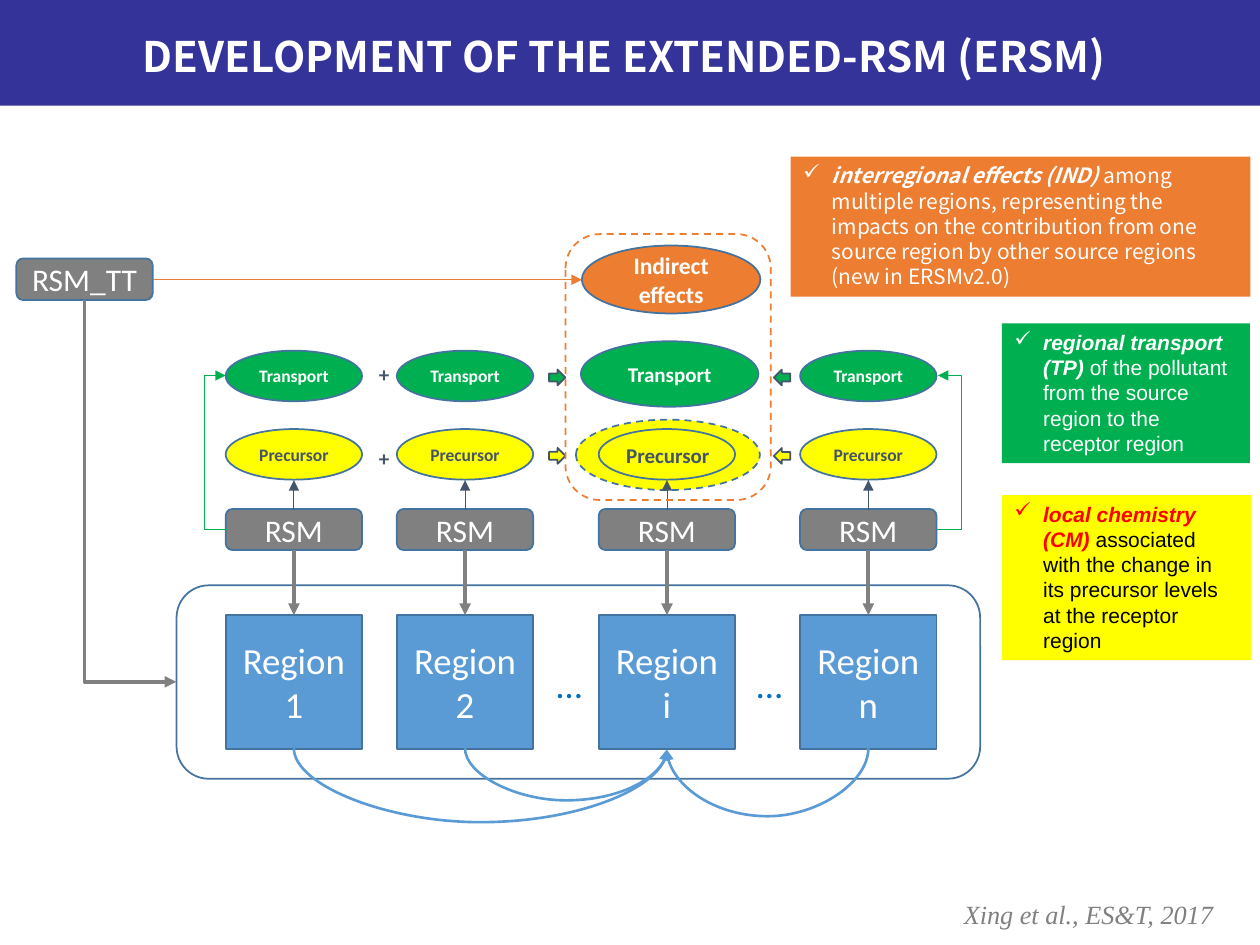
from lxml import etree
from pptx import Presentation
from pptx import util as u
from pptx.dml.color import RGBColor
from pptx.enum import dml, shapes, text
from pptx.oxml.ns import qn

NAVY = RGBColor(0x33, 0x33, 0x99)
WHITE = RGBColor(0xFF, 0xFF, 0xFF)
BLACK = RGBColor(0, 0, 0)
GREY = RGBColor(0x80, 0x80, 0x80)
SLATE = RGBColor(0x44, 0x54, 0x6A)
EDGE = RGBColor(0x43, 0x73, 0x9E)
BLUE = RGBColor(0x5B, 0x9B, 0xD5)
DOT = RGBColor(0x00, 0x70, 0xC0)
GREEN = RGBColor(0x00, 0xB0, 0x50)
YELLOW = RGBColor(0xFF, 0xFF, 0x00)
ORANGE = RGBColor(0xED, 0x7D, 0x31)
RED = RGBColor(0xFF, 0, 0)

KIND = shapes.MSO_SHAPE
NOTO = "Noto Sans CJK SC"
COLS = (0.99, 4.44, 8.51, 12.57)  # column offsets inside the diagram
WIDE = 2.75                       # column width
MID = [x + WIDE / 2 for x in COLS]
HUB = 2                           # the receptor column
THIN = 0.03                       # depth of a nearly flat connector


def style(obj, values):
    for key, val in values.items():
        setattr(obj, key, val)


def write(para, words, ink, size, name="Calibri", bold=False, slant=False):
    run = para.add_run()
    run.text = words
    style(run.font, dict(size=u.Pt(size), name=name, bold=bold, italic=slant))
    run.font.color.rgb = ink


def shape(slide, kind, box, fill=None, edge=EDGE, dash=False):
    item = slide.shapes.add_shape(kind, *map(u.Cm, box))
    item.shadow.inherit = False
    if fill is None:
        item.fill.background()
    else:
        item.fill.solid()
        item.fill.fore_color.rgb = fill
    if edge is None:
        item.line.fill.background()
    else:
        item.line.color.rgb = edge
        item.line.width = u.Pt(1)
    if dash:
        item.line.dash_style = dml.MSO_LINE.DASH
    return item


def node(slide, kind, box, words, fill, ink, size, bold=False, dash=False):
    item = shape(slide, kind, box, fill, dash=dash)
    frame = item.text_frame
    style(frame, dict(word_wrap=True, vertical_anchor=text.MSO_ANCHOR.MIDDLE))
    if kind == KIND.OVAL:
        style(frame, dict(margin_left=0, margin_right=0, margin_top=0, margin_bottom=0))
    para = frame.paragraphs[0]
    para.alignment = text.PP_ALIGN.CENTER
    write(para, words, ink, size, bold=bold)


def label(slide, box, words, ink, size, wrap=False, **font):
    frame = slide.shapes.add_textbox(*map(u.Cm, box)).text_frame
    frame.word_wrap = wrap
    write(frame.paragraphs[0], words, ink, size, **font)


def arrow(slide, ends, ink, width):
    item = slide.shapes.add_connector(shapes.MSO_CONNECTOR.STRAIGHT, *map(u.Cm, ends))
    item.line.color.rgb = ink
    item.line.width = u.Pt(width)
    etree.SubElement(item.line._get_or_add_ln(), qn("a:tailEnd"), type="triangle")
    etree.SubElement(item.element.spPr, qn("a:effectLst"))
    return item


def link(slide, preset, box, ink, width, turn=0, flip=None, bend=None):
    """Bent or curved arrow; box is its frame before turning."""
    x, y, w, h = box
    item = arrow(slide, (x, y, x + w, y + h), ink, width)
    props = item.element.spPr
    frame, geom = props.find(qn("a:xfrm")), props.find(qn("a:prstGeom"))
    frame.set("rot", str(turn * 60000))
    if flip:
        frame.set(flip, "1")
    geom.set("prst", preset)
    if bend:
        guides = geom.find(qn("a:avLst"))
        if guides is None:
            guides = etree.SubElement(geom, qn("a:avLst"))
        etree.SubElement(guides, qn("a:gd"), name="adj1",
                         fmla=f"val {round(bend / w * 100000)}")


def header(slide, box):
    x, y, w, h = box
    band = shape(slide, KIND.RECTANGLE, box, NAVY, None)
    band.element.getparent().insert(2, band.element)  # behind the title
    title = slide.shapes.title
    style(title, dict(left=u.Cm(x + 1.15), top=u.Cm(y + 0.2),
                      width=u.Cm(w - 2.54), height=u.Cm(h - 0.28)))
    style(title.text_frame, dict(vertical_anchor=text.MSO_ANCHOR.MIDDLE, word_wrap=True,
                                 auto_size=text.MSO_AUTO_SIZE.NONE))
    para = title.text_frame.paragraphs[0]
    para.alignment = text.PP_ALIGN.CENTER
    write(para, "DEVELOPMENT OF THE EXTENDED-RSM (ERSM)", WHITE, 24, NOTO, True)


def regions(slide, box):
    x, y, w, h = box
    shape(slide, KIND.ROUNDED_RECTANGLE, box)
    for col, tag in zip(COLS, "12in"):
        node(slide, KIND.RECTANGLE, (x + col, y + 0.6, WIDE, 2.7),
             f"Region {tag}", BLUE, WHITE, 21)
    for gap in (7.41, 11.45):
        label(slide, (x + gap, y + 1.41, 1.04, 1.14), "…", DOT, 21)
    # Arcs from the source regions to the receptor
    foot = y + 3.3
    for src, drop in ((0, 1.49), (1, 1.05), (3, 1.37)):
        span = abs(MID[HUB] - MID[src])
        centre = x + (MID[HUB] + MID[src]) / 2
        turn, flip = (270, "flipH") if src < HUB else (90, None)
        link(slide, "curvedConnector3", (centre - THIN / 2, foot - span / 2, THIN, span),
             BLUE, 1.5, turn, flip, drop)


def models(slide, box):
    x, y, w, h = box
    for col, mid in zip(COLS, MID):
        node(slide, KIND.ROUNDED_RECTANGLE, (x + col, y, WIDE, h), "RSM", GREY, WHITE, 18)
        arrow(slide, (x + mid, y + h, x + mid, y + 2.14), GREY, 2.25)


def effects(slide, box, words, fill, ink, big, plus, dash=False):
    """One row of ovals that add up to the large one of the receptor."""
    x, y, w, h = box
    left, wide = big
    node(slide, KIND.OVAL, (x + left, y, wide, h), words, fill, ink, 12, True, dash)
    for i, col in enumerate(COLS):
        if i != HUB:
            node(slide, KIND.OVAL, (x + col, y + 0.19, WIDE, 1.02), words, fill, ink, 10, True)
    label(slide, (x + 3.83, y + plus, 0.74, 0.76), "+", SLATE, 12, bold=True)
    for gap, turn in ((7.51, 0), (12.04, 180)):
        block = shape(slide, KIND.RIGHT_ARROW, (x + gap, y + 0.57, 0.33, 0.32), fill, SLATE)
        block.rotation = turn


def precursor(slide, box):
    x, y, w, h = box
    effects(slide, box, "Precursor", YELLOW, SLATE, (8.05, 3.71), 0.4, True)
    shape(slide, KIND.OVAL, (x + COLS[HUB], y + 0.19, WIDE, 1.02))
    for mid in MID:
        arrow(slide, (x + mid, y + 1.82, x + mid, y + 1.22), SLATE, 0.5)


def transport(slide, box):
    x, y, w, h = box
    effects(slide, box, "Transport", GREEN, WHITE, (8.15, 3.58), 0.28)
    # Wires from the outer models
    for edge, turn, flip, bend in ((COLS[0], 180, None, 0.46),
                                   (COLS[-1] + WIDE, 0, "flipV", 0.51)):
        link(slide, "bentConnector3", (x + edge, y + 0.69, THIN, 3.1),
             GREEN, 0.5, turn, flip, bend)


def indirect(slide, box):
    x, y, w, h = box
    node(slide, KIND.ROUNDED_RECTANGLE, (x, y + 0.49, WIDE, 0.84), "RSM_TT", GREY, WHITE, 18)
    node(slide, KIND.OVAL, (x + 11.4, y + 0.23, 3.6, 1.37), "Indirect effects",
         ORANGE, WHITE, 13.5, True)
    link(slide, "bentConnector2", (x - 1.55, y + 4.25, 7.7, 1.85), GREY, 2.25, 270, "flipH")
    arrow(slide, (x + WIDE, y + 0.92, x + 11.4, y + 0.92), ORANGE, 0.5)
    shape(slide, KIND.ROUNDED_RECTANGLE, (x + w - 4.14, y, 4.14, h), None, ORANGE, True)


def note(slide, box, fill, lead, rest, inks, name):
    frame = shape(slide, KIND.RECTANGLE, box, fill, None).text_frame
    style(frame, dict(word_wrap=True, vertical_anchor=text.MSO_ANCHOR.TOP))
    para = frame.paragraphs[0]
    para.alignment = text.PP_ALIGN.LEFT
    props = para._p.get_or_add_pPr()
    style_in = u.Cm(0.58)
    props.set("marL", str(style_in))
    props.set("indent", str(-style_in))
    etree.SubElement(props, qn("a:buChar"), char="✓")
    write(para, lead + " ", inks[0], 12, name, True, True)
    write(para, rest, inks[1], 12, name)


def main():
    deck = Presentation()
    style(deck, dict(slide_width=u.Cm(25.4), slide_height=u.Cm(19.05)))
    slide = deck.slides.add_slide(deck.slide_layouts[5])
    header(slide, (0, 0, 25.4, 2.13))
    # Diagram, from the bottom row up
    regions(slide, (3.56, 11.8, 16.2, 3.9))
    models(slide, (3.56, 10.26, 16.2, 0.83))
    precursor(slide, (3.56, 8.46, 16.2, 1.42))
    transport(slide, (3.56, 6.88, 16.2, 1.32))
    indirect(slide, (0.33, 4.72, 15.21, 5.36))
    # Citation and notes
    label(slide, (19.18, 17.98, 6.22, 0.89), "Xing et al., ES&T, 2017", GREY, 15, True,
          name="Times New Roman", slant=True)
    note(slide, (20.2, 9.98, 5.02, 3.33), YELLOW, "local chemistry (CM)",
         "associated with the change in its precursor levels at the receptor region",
         (RED, BLACK), "Arial")
    note(slide, (20.2, 6.52, 5, 2.82), GREEN, "regional transport (TP)",
         "of the pollutant from the source region to the receptor region",
         (WHITE, WHITE), "Arial")
    note(slide, (15.94, 3.16, 9.27, 2.82), ORANGE, "interregional effects (IND)",
         "among multiple regions, representing the impacts on the contribution from one "
         "source region by other source regions (new in ERSMv2.0)", (WHITE, WHITE), NOTO)
    deck.save("out.pptx")


if __name__ == "__main__":
    main()
